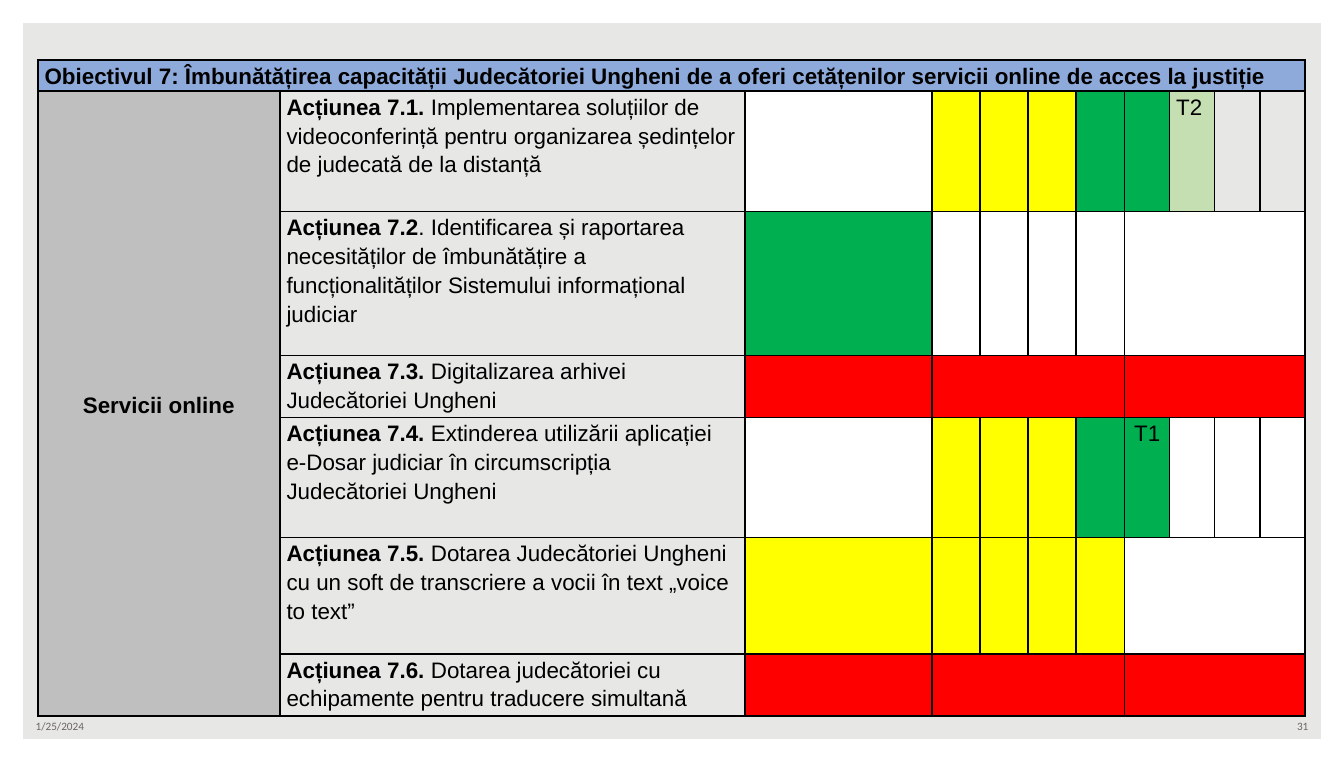
from lxml.etree import SubElement
from pptx import Presentation
from pptx.dml.color import RGBColor
from pptx.enum.shapes import MSO_SHAPE
from pptx.enum.text import MSO_ANCHOR, PP_ALIGN
from pptx.oxml.ns import qn
from pptx.util import Pt

BACKGROUND = RGBColor(0xE7, 0xE7, 0xE5)
BLACK = RGBColor(0, 0, 0)
WHITE = RGBColor(0xFF, 0xFF, 0xFF)
BLUE = RGBColor(0x8E, 0xAA, 0xDB)
GREY = RGBColor(0xBF, 0xBF, 0xBF)
FOOTER_GREY = RGBColor(0x6C, 0x64, 0x63)
YELLOW = RGBColor(0xFF, 0xFF, 0)
GREEN = RGBColor(0, 0xB0, 0x50)
LIGHT_GREEN = RGBColor(0xC5, 0xDF, 0xB3)
RED = RGBColor(0xFF, 0, 0)

OBJECTIVE = ("Obiectivul 7: Îmbunătățirea capacității Judecătoriei Ungheni de a oferi "
             "cetățenilor servicii online de acces la justiție")
COLUMN_WIDTHS = [129.6, 249.1, 100.2] + [25.8] * 4 + [24.2] * 4
TITLE_HEIGHT = 15.8
FIRST_YEAR, SECOND_YEAR, THIRD_YEAR = 2, 3, 7
QUARTERS = 4

# Number, description, row height, then the colours of the three years;
# a year with one colour is a single cell, None leaves a cell unfilled.
ACTIONS = [
    ("Acțiunea 7.1.", " Implementarea soluțiilor de videoconferință pentru organizarea "
     "ședințelor de judecată de la distanță", 64.6,
     WHITE, [YELLOW] * 3 + [GREEN], [GREEN, LIGHT_GREEN, None, None]),
    ("Acțiunea 7.2", ". Identificarea și raportarea necesităților de îmbunătățire a "
     "funcționalităților Sistemului informațional judiciar", 77.1,
     GREEN, [WHITE] * 4, [WHITE]),
    ("Acțiunea 7.3.", " Digitalizarea arhivei Judecătoriei Ungheni", 32,
     RED, [RED], [RED]),
    ("Acțiunea 7.4.", " Extinderea utilizării aplicației e-Dosar judiciar în "
     "circumscripția Judecătoriei Ungheni", 64.4,
     WHITE, [YELLOW] * 3 + [GREEN], [GREEN] + [WHITE] * 3),
    ("Acțiunea 7.5.", " Dotarea Judecătoriei Ungheni cu un soft de transcriere a vocii "
     "în text „voice to text”", 62.4,
     YELLOW, [YELLOW] * 4, [WHITE]),
    ("Acțiunea 7.6.", " Dotarea judecătoriei cu echipamente pentru traducere simultană", 31.5,
     RED, [RED], [RED]),
]


def add_frame(slide, width, height):
    frame = slide.shapes.add_shape(MSO_SHAPE.FRAME, 0, 0, width, height)
    frame.adjustments[0] = 0.03
    frame.shadow.inherit = False
    frame.fill.solid()
    frame.fill.fore_color.rgb = WHITE
    frame.line.fill.background()


def style_run(run, size, font_name, color, bold=False):
    run.font.size = Pt(size)
    run.font.name = font_name
    run.font.color.rgb = color
    run.font.bold = bold


def add_footer(slide, text, left, alignment):
    footer = slide.shapes.add_textbox(Pt(left), Pt(381.6), Pt(168), Pt(14.4))
    frame = footer.text_frame
    frame.word_wrap = True
    frame.vertical_anchor = MSO_ANCHOR.MIDDLE
    frame.text = text
    paragraph = frame.paragraphs[0]
    paragraph.alignment = alignment
    style_run(paragraph.runs[0], 6, "Calibri", FOOTER_GREY)


def add_borders(cell):
    properties = cell._tc.get_or_add_tcPr()
    for position, side in enumerate(("a:lnL", "a:lnR", "a:lnT", "a:lnB")):
        border = SubElement(properties, qn(side), w=str(Pt(1)))
        fill = SubElement(border, qn("a:solidFill"))
        SubElement(fill, qn("a:srgbClr"), val=str(BLACK))
        properties.insert(position, border)


def prepare_cell(cell):
    """Give a cell its margins and borders and no fill."""
    cell.margin_left = cell.margin_right = Pt(3.6)
    cell.margin_top = cell.margin_bottom = 0
    cell.fill.background()
    add_borders(cell)


def fill_cell(cell, color):
    if color is not None:
        cell.fill.solid()
        cell.fill.fore_color.rgb = color


def write_cell(cell, alignment, bold_text="", plain_text=""):
    paragraph = cell.text_frame.paragraphs[0]
    paragraph.alignment = alignment
    paragraph.line_spacing = 1.15
    for text, bold in ((bold_text, True), (plain_text, False)):
        if text:
            run = paragraph.add_run()
            run.text = text
            style_run(run, 12, "Arial", BLACK, bold)


def fill_year(table, row, first_column, colors):
    if len(colors) == 1:
        table.cell(row, first_column).merge(table.cell(row, first_column + QUARTERS - 1))
    for offset, color in enumerate(colors):
        fill_cell(table.cell(row, first_column + offset), color)


def add_action_table(slide):
    heights = [TITLE_HEIGHT] + [action[2] for action in ACTIONS]
    table = slide.shapes.add_table(
        len(heights), len(COLUMN_WIDTHS), Pt(20.3), Pt(32.2),
        Pt(sum(COLUMN_WIDTHS)), Pt(sum(heights))).table
    table.first_row = table.horz_banding = False
    for column, width in zip(table.columns, COLUMN_WIDTHS):
        column.width = Pt(width)
    for row, height in zip(table.rows, heights):
        row.height = Pt(height)
    for cell in table.iter_cells():
        prepare_cell(cell)

    objective = table.cell(0, 0)
    objective.merge(table.cell(0, len(COLUMN_WIDTHS) - 1))
    fill_cell(objective, BLUE)
    write_cell(objective, PP_ALIGN.JUSTIFY, OBJECTIVE)

    area = table.cell(1, 0)
    area.merge(table.cell(len(ACTIONS), 0))
    area.vertical_anchor = MSO_ANCHOR.MIDDLE
    fill_cell(area, GREY)
    write_cell(area, PP_ALIGN.CENTER, "Servicii online")

    for row, (number, description, _, first, second, third) in enumerate(ACTIONS, 1):
        write_cell(table.cell(row, 1), PP_ALIGN.LEFT, number, description)
        fill_cell(table.cell(row, FIRST_YEAR), first)
        fill_year(table, row, SECOND_YEAR, second)
        fill_year(table, row, THIRD_YEAR, third)

    write_cell(table.cell(1, THIRD_YEAR + 1), PP_ALIGN.JUSTIFY, plain_text="T2")
    first_term = table.cell(4, THIRD_YEAR)
    first_term.margin_left = Pt(5.3)
    write_cell(first_term, PP_ALIGN.JUSTIFY, plain_text="T1")


def main():
    presentation = Presentation()
    presentation.slide_width = Pt(720)
    presentation.slide_height = Pt(408.24)
    slide = presentation.slides.add_slide(presentation.slide_layouts[6])
    slide.background.fill.solid()
    slide.background.fill.fore_color.rgb = BACKGROUND
    add_frame(slide, presentation.slide_width, presentation.slide_height)
    add_footer(slide, "1/25/2024", 12, PP_ALIGN.LEFT)
    add_footer(slide, "31", 540, PP_ALIGN.RIGHT)
    add_action_table(slide)
    presentation.save("out.pptx")


if __name__ == "__main__":
    main()
